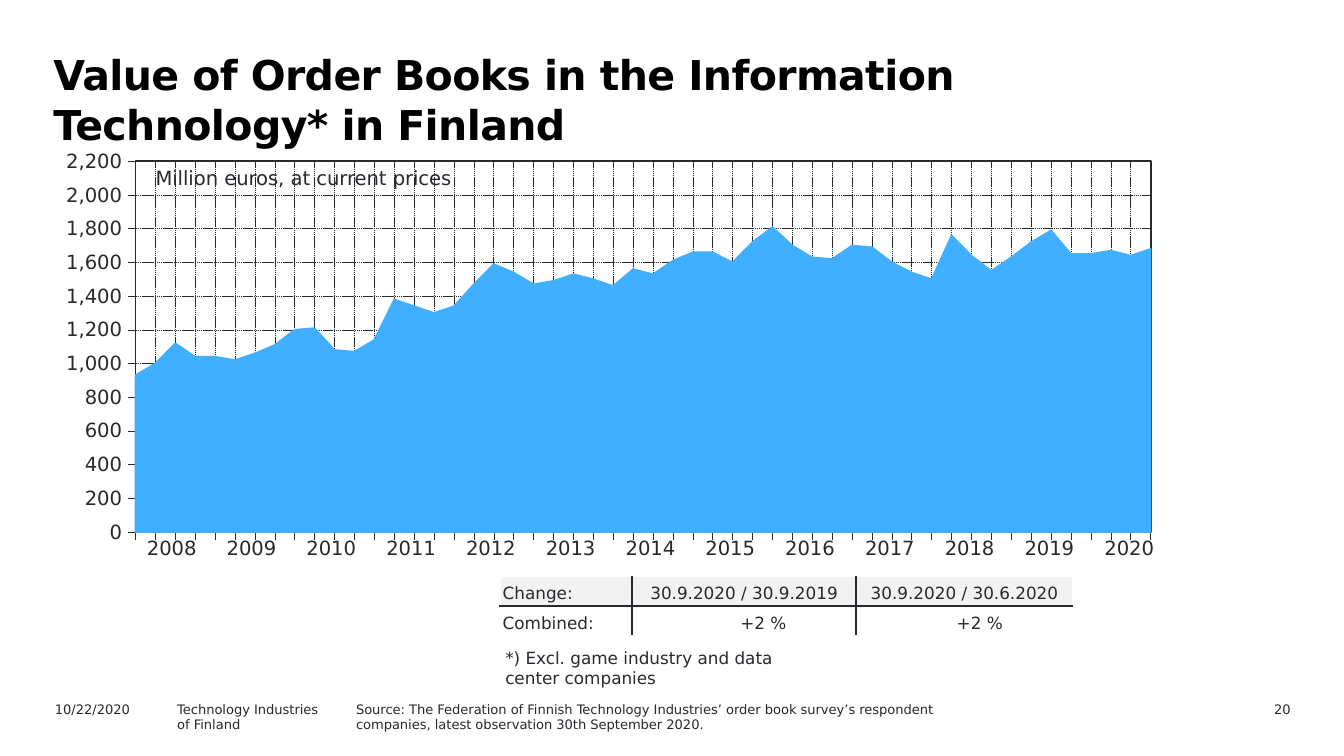
from lxml import etree
from pptx import Presentation
from pptx import util as u
from pptx.chart import data as chart_data
from pptx.dml.color import RGBColor
from pptx.enum import chart as ch, dml, text
from pptx.oxml import parse_xml
from pptx.oxml.ns import nsdecls, qn

INK, BLUE, GREY, WHITE, BLACK = "29282E", "40AFFF", "F2F2F2", "FFFFFF", "000000"
FONT = "DejaVu Sans"
NO_STYLE = "{2D5ABB26-0587-4C30-8999-92F81FD0307C}"
LEFT, CENTER, RIGHT = text.PP_ALIGN.LEFT, text.PP_ALIGN.CENTER, text.PP_ALIGN.RIGHT

# Quarterly order books, million euros
ORDER_BOOKS = [
    930, 1000, 1120, 1040, 1040, 1020, 1060, 1110, 1200, 1210, 1080, 1070, 1140,
    1380, 1340, 1300, 1340, 1470, 1590, 1540, 1470, 1490, 1530, 1500, 1460, 1560,
    1530, 1610, 1660, 1660, 1600, 1720, 1810, 1700, 1630, 1620, 1700, 1690, 1600,
    1540, 1500, 1760, 1640, 1550, 1630, 1720, 1790, 1650, 1650, 1670, 1640, 1680,
]
CHANGES = [
    ["Change:", "30.9.2020 / 30.9.2019", "30.9.2020 / 30.6.2020"],
    ["Combined:", "+2 %", "+2 %"],
]


def rgb(hex_string):
    return RGBColor.from_string(hex_string)


def cm_box(box):
    return [u.Cm(length) for length in box]


def style_font(font, size, color=INK, bold=False):
    font.name, font.size, font.bold = FONT, u.Pt(size), bold
    font.color.rgb = rgb(color)


def fill_frame(frame, words, size, align=LEFT, color=INK, bold=False):
    frame.text = words
    for paragraph in frame.paragraphs:
        paragraph.alignment = align
        for run in paragraph.runs:
            style_font(run.font, size, color, bold)


def add_text(slide, box, words, size, wrap=True, **look):
    frame = slide.shapes.add_textbox(*cm_box(box)).text_frame
    frame.word_wrap = wrap
    fill_frame(frame, words, size, **look)
    return frame


def add_title(slide, box):
    frame = add_text(slide, box, "Value of Order Books in the Information Technology* in Finland",
                     22, color=BLACK, bold=True)
    heading = frame.paragraphs[0]
    heading.line_spacing = u.Pt(27)
    heading.runs[0].font._element.set("spc", "-30")
    frame.margin_left = u.Cm(0.3)


def style_line(line, width, color=INK, dashed=False):
    line.color.rgb = rgb(color)
    line.width = u.Pt(width)
    if dashed:
        line.dash_style = dml.MSO_LINE.SQUARE_DOT


def add_order_chart(slide, box):
    quarters = chart_data.CategoryChartData()
    quarters.categories = [str(n + 1) for n in range(len(ORDER_BOOKS))]
    quarters.add_series("Series 1", ORDER_BOOKS)
    chart = slide.shapes.add_chart(ch.XL_CHART_TYPE.AREA_STACKED, *cm_box(box), quarters).chart
    chart.has_legend = chart.has_title = False
    style_font(chart.font, 10.5)
    chart.plots[0].vary_by_categories = False

    area = chart.plots[0].series[0].format
    area.fill.solid()
    area.fill.fore_color.rgb = rgb(BLUE)
    style_line(area.line, 0.88, BLUE)

    # Axes and dotted grid
    for axis in (chart.category_axis, chart.value_axis):
        axis.has_major_gridlines = True
        axis.major_tick_mark = ch.XL_TICK_MARK.OUTSIDE
        axis.minor_tick_mark = ch.XL_TICK_MARK.NONE
        style_line(axis.format.line, 0.22)
        style_line(axis.major_gridlines.format.line, 0.25, dashed=True)
        style_font(axis.tick_labels.font, 10.5)
    chart.category_axis.tick_label_position = ch.XL_TICK_LABEL_POSITION.NONE
    values = chart.value_axis
    values.minimum_scale, values.maximum_scale, values.major_unit = 0, 2200, 200
    values.tick_labels.number_format = "#,##0"
    values.tick_labels.number_format_is_linked = False
    values._element.find(qn("c:crossBetween")).set("val", "midCat")

    # Plot position and frame
    plot_area = chart._chartSpace.chart.plotArea
    for layout in plot_area.findall(qn("c:layout")):
        plot_area.remove(layout)
    sizes = "".join(f'<c:{key} val="{value}"/>' for key, value in
                    (("x", 0.075), ("y", 0.029), ("w", 0.813), ("h", 0.885)))
    plot_area.insert(0, parse_xml(
        f'<c:layout {nsdecls("c")}><c:manualLayout><c:layoutTarget val="inner"/>'
        f'<c:xMode val="edge"/><c:yMode val="edge"/>{sizes}</c:manualLayout></c:layout>'))
    plot_area.append(parse_xml(
        f'<c:spPr {nsdecls("c", "a")}><a:noFill/><a:ln w="12700"><a:solidFill>'
        f'<a:srgbClr val="{INK}"/></a:solidFill></a:ln></c:spPr>'))


def add_plain_table(slide, box, rows, columns):
    table = slide.shapes.add_table(rows, columns, *cm_box(box)).table
    table.first_row = table.horz_banding = False
    table._tbl.tblPr.find(qn("a:tableStyleId")).text = NO_STYLE
    return table


def add_years(slide, box):
    years = range(2008, 2021)
    table = add_plain_table(slide, box, 1, len(years))
    for cell, year in zip(table.rows[0].cells, years):
        cell.fill.background()
        fill_frame(cell.text_frame, str(year), 10.5, CENTER)


def set_borders(cell, colors):
    properties = cell._tc.get_or_add_tcPr()
    for position, (side, color) in enumerate(zip("LRTB", colors)):
        border = etree.Element(qn(f"a:ln{side}"), w="12700")
        solid = etree.SubElement(border, qn("a:solidFill"))
        etree.SubElement(solid, qn("a:srgbClr"), val=color)
        properties.insert(position, border)


def add_changes(slide, box):
    table = add_plain_table(slide, box, 2, 3)
    for column, width in zip(table.columns, (2.49, 4.24, 4.09)):
        column.width = u.Cm(width)
    for r, row in enumerate(CHANGES):
        for c, words in enumerate(row):
            cell = table.cell(r, c)
            figure = r == 1 and c > 0
            align = LEFT if c == 0 else RIGHT if figure else CENTER
            fill_frame(cell.text_frame, words, 9, align)
            cell.vertical_anchor = text.MSO_ANCHOR.BOTTOM
            cell.margin_left = cell.margin_top = cell.margin_bottom = u.Cm(0.05)
            cell.margin_right = u.Cm(1.32 if figure else 0.05)
            cell.fill.solid()
            cell.fill.fore_color.rgb = rgb(WHITE if r else GREY)
            # Only the inner edges are dark: left, right, top, bottom
            inner = (c > 0, c < 2, r > 0, r < 1)
            set_borders(cell, [INK if dark else WHITE for dark in inner])


def add_footer(slide, box):
    left, top, width, height = box
    add_text(slide, (left, top, 2.54, height), "10/22/2020", 7)
    add_text(slide, (left + 2.31, top, 4.57, height), "Technology Industries\nof Finland", 7)
    add_text(slide, (left + 5.69, top, 12.5, height),
             "Source: The Federation of Finnish Technology Industries’ order book survey’s "
             "respondent companies, latest observation 30th September 2020.", 7)
    add_text(slide, (left + width - 2.4, top, 2.4, height), "20", 7, align=RIGHT)


def main():
    deck = Presentation()
    deck.slide_width, deck.slide_height = u.Cm(25.4), u.Cm(14.29)
    slide = deck.slides.add_slide(deck.slide_layouts[6])

    add_title(slide, (0.71, 0.79, 22.2, 1.8))
    add_order_chart(slide, (0.79, 2.82, 23.6, 7.92))
    add_text(slide, (2.69, 3.02, 6.2, 0.69), "Million euros, at current prices", 10.5, wrap=False)
    add_changes(slide, (9.45, 10.9, 10.82, 1.12))
    add_text(slide, (9.3, 12.12, 6.3, 1.02), "*) Excl. game industry and data center companies", 9)
    add_footer(slide, (0.79, 13.13, 23.85, 0.46))
    add_years(slide, (2.49, 10.03, 19.61, 0.79))
    deck.save("out.pptx")


if __name__ == "__main__":
    main()
